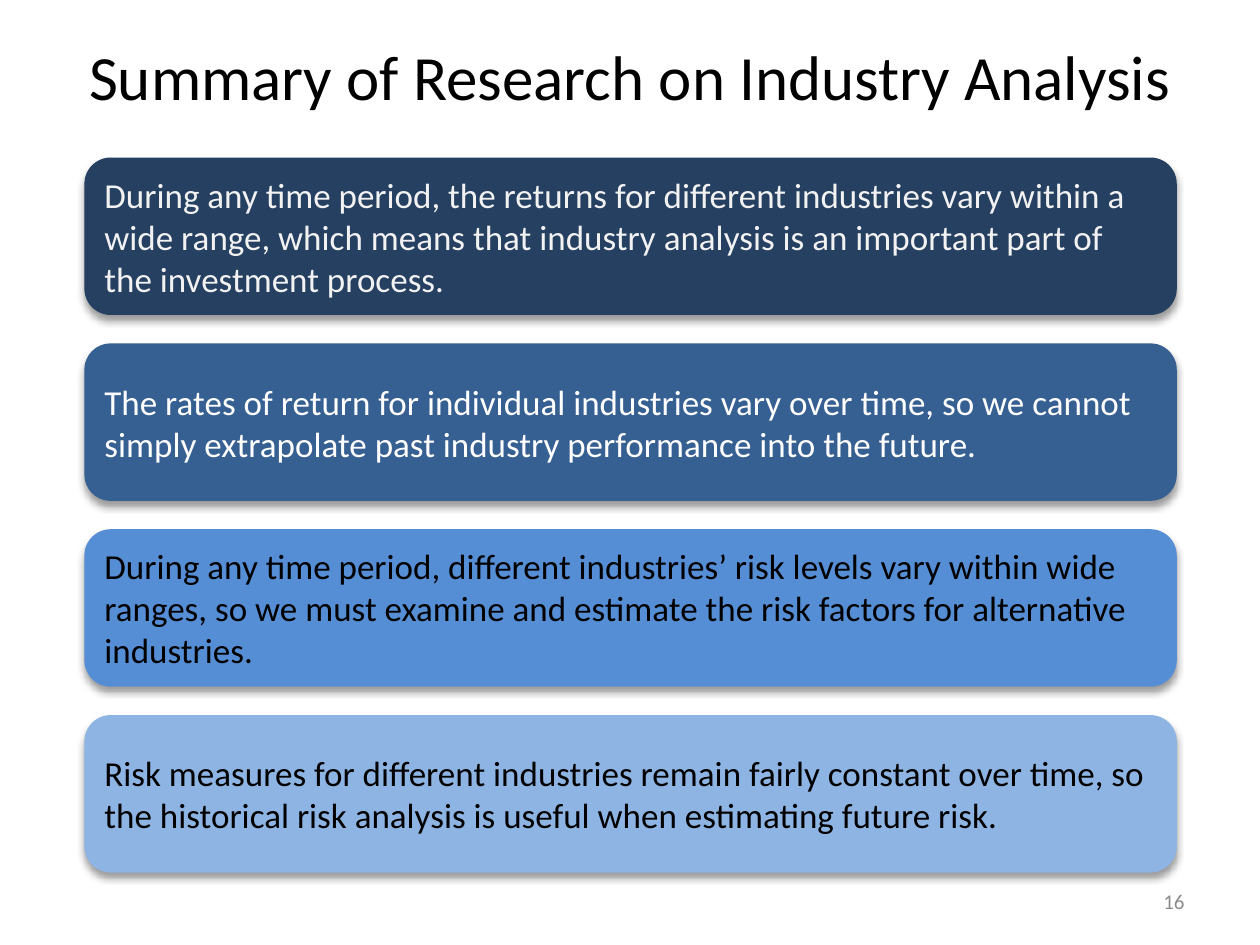
from lxml.etree import SubElement
from pptx import Presentation
from pptx.dml.color import RGBColor
from pptx.enum.shapes import MSO_SHAPE
from pptx.enum.text import MSO_ANCHOR, MSO_AUTO_SIZE, PP_ALIGN
from pptx.oxml.ns import qn
from pptx.util import Inches, Pt

COLORS = {
    "navy": "254061", "blue": "376092", "azure": "558ED5", "sky": "8EB4E3",
    "white": "FFFFFF", "pale": "F2F2F2", "black": "000000", "gray": "8C8C8C",
}

FINDINGS = [
    ("navy", "pale", "During any time period, the returns for different industries vary "
     "within a wide range, which means that industry analysis is an important part of "
     "the investment process."),
    ("blue", "white", "The rates of return for individual industries vary over time, so we "
     "cannot simply extrapolate past industry performance into the future."),
    ("azure", "black", "During any time period, different industries’ risk levels vary within "
     "wide ranges, so we must examine and estimate the risk factors for alternative "
     "industries."),
    ("sky", "black", "Risk measures for different industries remain fairly constant over time, "
     "so the historical risk analysis is useful when estimating future risk."),
]

ROW_TOP, ROW_PITCH = 1.25, 1.475
CARD_LEFT, CARD_WIDTH, CARD_HEIGHT = 0.67, 8.67, 1.25


def rgb(name):
    return RGBColor.from_string(COLORS[name])


class SlideBuilder:
    font = "Calibri"

    def __init__(self, prs):
        self.slide = prs.slides.add_slide(prs.slide_layouts[5])

    def set_text(self, sp, text, size, color, align, anchor):
        tf = sp.text_frame
        tf.text = text
        tf.word_wrap = True
        tf.auto_size = MSO_AUTO_SIZE.NONE
        tf.vertical_anchor = anchor
        p = tf.paragraphs[0]
        p.alignment = align
        p.font.name, p.font.size = self.font, Pt(size)
        p.font.color.rgb = rgb(color)

    def title(self, text):
        sp = self.slide.shapes.title
        sp.left, sp.top, sp.width, sp.height = map(Inches, (0.5, 0.25, 9, 1.25))
        self.set_text(sp, text, 36, "black", PP_ALIGN.CENTER, MSO_ANCHOR.TOP)

    def card(self, row, fill, color, text):
        box = (CARD_LEFT, ROW_TOP + row * ROW_PITCH, CARD_WIDTH, CARD_HEIGHT)
        sp = self.slide.shapes.add_shape(MSO_SHAPE.ROUNDED_RECTANGLE, *map(Inches, box))
        sp.fill.solid()
        sp.fill.fore_color.rgb = rgb(fill)
        sp.line.fill.background()
        self.drop_shadow(sp)
        self.set_text(sp, text, 20, color, PP_ALIGN.LEFT, MSO_ANCHOR.MIDDLE)

    def drop_shadow(self, sp):
        sp.shadow.inherit = False
        effects = sp._element.spPr.find(qn("a:effectLst"))
        shadow = SubElement(effects, qn("a:outerShdw"), blurRad=str(Pt(4)),
                            dist=str(Pt(3)), dir="5400000", rotWithShape="0")
        color = SubElement(shadow, qn("a:srgbClr"), val=COLORS["black"])
        SubElement(color, qn("a:alpha"), val="40000")

    def page_number(self, number):
        sp = self.slide.shapes.add_textbox(*map(Inches, (7.17, 6.95, 2.33, 0.4)))
        self.set_text(sp, str(number), 12, "gray", PP_ALIGN.RIGHT, MSO_ANCHOR.MIDDLE)


def main():
    prs = Presentation()
    prs.slide_width, prs.slide_height = Inches(10), Inches(7.5)
    s = SlideBuilder(prs)
    s.title("Summary of Research on Industry Analysis")
    for row, finding in enumerate(FINDINGS):
        s.card(row, *finding)
    s.page_number(16)
    prs.save("out.pptx")


if __name__ == "__main__":
    main()
